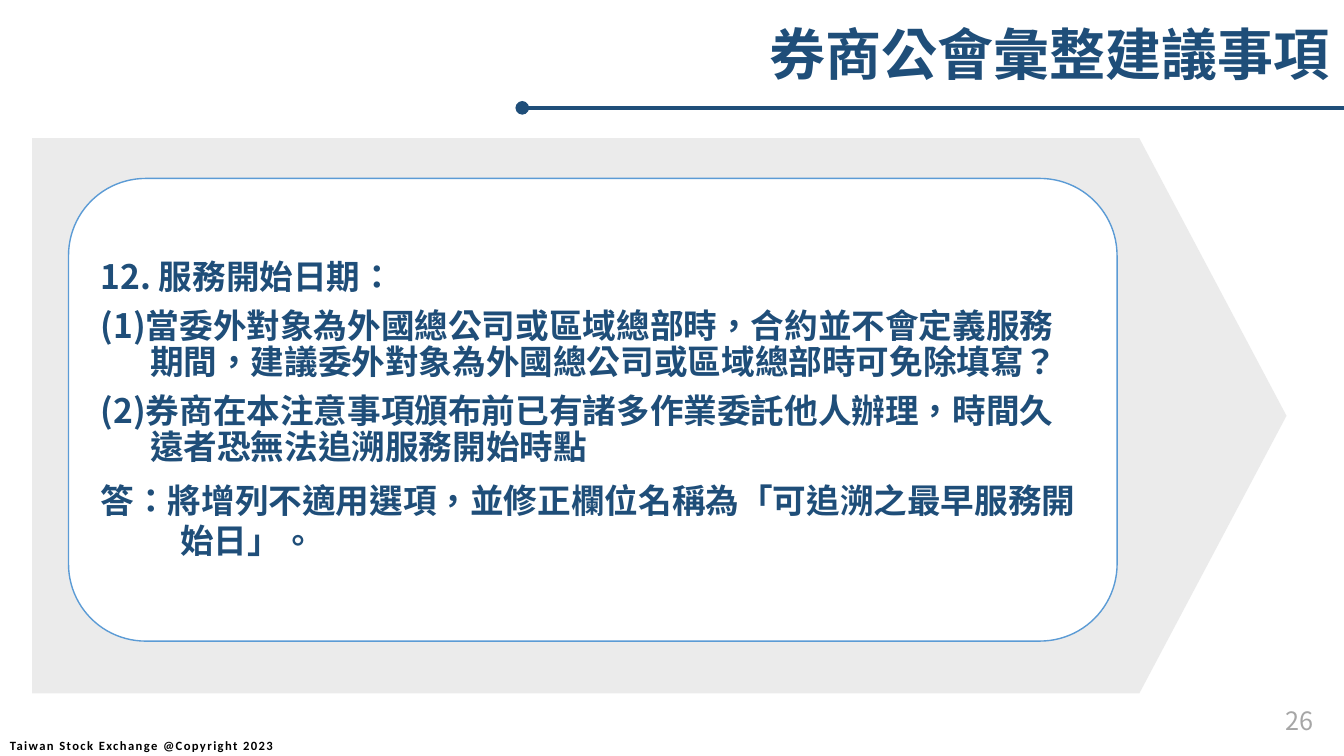
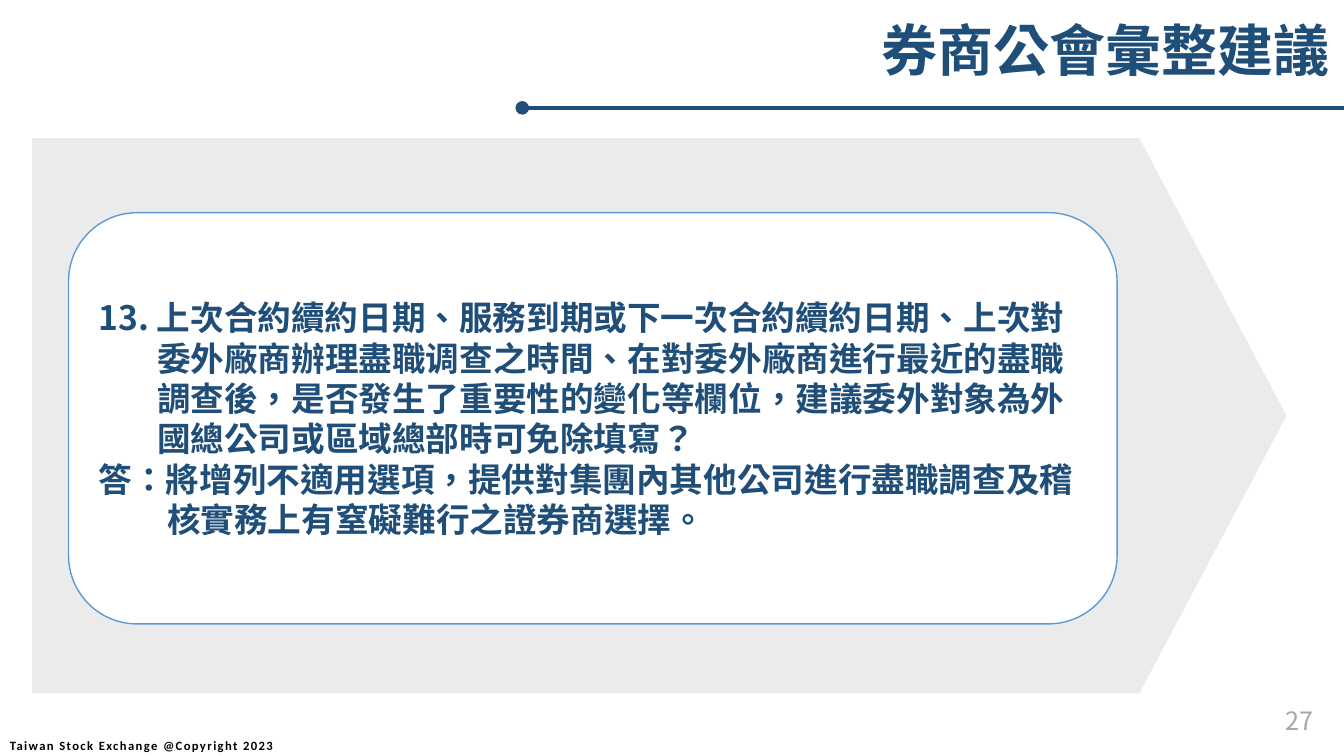
import pptx
import pptx.dml.color
import pptx.enum.lang
import pptx.enum.shapes
import pptx.enum.text
import pptx.oxml.ns
import pptx.util
from lxml import etree

Inches = pptx.util.Inches
Pt = pptx.util.Pt
ALIGN = pptx.enum.text.PP_ALIGN
ANCHOR = pptx.enum.text.MSO_ANCHOR
SHAPE = pptx.enum.shapes.MSO_SHAPE
qn = pptx.oxml.ns.qn

COLORS = {
    "navy": "1F4E79",
    "outline": "5B9BD5",
    "arrow": "D9D9D9",
    "panel": "FFFFFF",
    "number": "A6A6A6",
    "copyright": "000000",
}
CJK_FONT = "Noto Sans CJK SC"
SLIDE_WIDTH = 13.33
TIGHT = {"line_spacing": 0.9, "space_after": 9}

SLIDES = [
    {
        "number": 26,
        "title": "券商公會彙整建議事項",
        "title_top": 0.14,
        "panel": (0.68, 1.77, 10.4, 4.59),
        "body": (0.9, 2, 9.95, 4.14),
        "paragraphs": [
            ("12. 服務開始日期：", {"hanging": 0.49, **TIGHT}),
            ("(1)當委外對象為外國總公司或區域總部時，合約並不會定義服務期間，"
             "建議委外對象為外國總公司或區域總部時可免除填寫？", {"hanging": 0.49, **TIGHT}),
            ("(2)券商在本注意事項頒布前已有諸多作業委託他人辦理，"
             "時間久遠者恐無法追溯服務開始時點", {"hanging": 0.49, **TIGHT}),
            ("答：將增列不適用選項，並修正欄位名稱為「可追溯之最早服務開始日」。",
             {"hanging": 0.79}),
        ],
    },
    {
        "number": 27,
        "title": "券商公會彙整建議",
        "title_top": 0.11,
        "panel": (0.68, 2.11, 10.4, 4.08),
        "body": (0.88, 2.31, 10, 3.68),
        "paragraphs": [
            ("13. 上次合約續約日期、服務到期或下一次合約續約日期、"
             "上次對委外廠商辦理盡職调查之時間、在對委外廠商進行最近的盡職調查後，"
             "是否發生了重要性的變化等欄位，建議委外對象為外國總公司或區域總部時可免除填寫？",
             {"hanging": 0.58}),
            ("答：將增列不適用選項，提供對集團內其他公司進行盡職調查及稽核實務上"
             "有窒礙難行之證券商選擇。", {"hanging": 0.68}),
        ],
    },
]


def rgb(name):
    return pptx.dml.color.RGBColor.from_string(COLORS[name])


def write_text(paragraph, text, size=24, color="navy", bold=True, font_name=CJK_FONT,
               align=ALIGN.LEFT, hanging=0, line_spacing=None, space_after=0, tracking=0):
    paragraph.alignment = align
    paragraph.line_spacing = line_spacing
    paragraph.space_after = Pt(space_after)
    if hanging:
        properties = paragraph._p.get_or_add_pPr()
        properties.set("marL", str(Inches(hanging)))
        properties.set("indent", str(-Inches(hanging)))
    run = paragraph.add_run()
    run.text = text
    font = run.font
    font.name = font_name
    font.size = Pt(size)
    font.bold = bold
    font.color.rgb = rgb(color)
    font.language_id = pptx.enum.lang.MSO_LANGUAGE_ID.TRADITIONAL_CHINESE
    run_properties = run._r.get_or_add_rPr()
    etree.SubElement(run_properties, qn("a:ea")).set("typeface", font_name)
    if tracking:
        run_properties.set("spc", str(tracking * 100))


def add_text_box(slide, box, paragraphs, anchor=ANCHOR.MIDDLE, inset=0.05):
    frame = slide.shapes.add_textbox(*map(Inches, box)).text_frame
    frame.word_wrap = True
    frame.vertical_anchor = anchor
    frame.margin_top = frame.margin_bottom = Inches(inset)
    for index, (text, style) in enumerate(paragraphs):
        paragraph = frame.add_paragraph() if index else frame.paragraphs[0]
        write_text(paragraph, text, **style)


def add_panel(slide, kind, box, fill, outline=None, adjustment=None, opacity=None):
    shape = slide.shapes.add_shape(kind, *map(Inches, box))
    shape.shadow.inherit = False
    shape.fill.solid()
    shape.fill.fore_color.rgb = rgb(fill)
    if adjustment is not None:
        shape.adjustments[0] = adjustment
    if opacity is not None:
        color = shape._element.spPr.find(qn("a:solidFill"))[0]
        etree.SubElement(color, qn("a:alpha")).set("val", str(opacity * 1000))
    if outline:
        shape.line.color.rgb = rgb(outline)
        shape.line.width = Pt(1)
    else:
        shape.line.fill.background()


def add_title_rule(slide):
    rule = slide.shapes.add_connector(
        pptx.enum.shapes.MSO_CONNECTOR.STRAIGHT,
        Inches(5.18), Inches(1.07), Inches(SLIDE_WIDTH), Inches(1.07))
    rule.line.color.rgb = rgb("navy")
    rule.line.width = Pt(3.25)
    etree.SubElement(rule.line._get_or_add_ln(), qn("a:headEnd")).set("type", "oval")
    etree.SubElement(rule._element.spPr, qn("a:effectLst"))


def add_frame(slide, title, title_top, number):
    add_text_box(slide, (0, 7.2, 3.09, 0.4), [
        ("Taiwan Stock Exchange @Copyright 2023",
         {"size": 9, "color": "copyright", "font_name": "Calibri", "tracking": 1})])
    add_text_box(slide, (7.28, title_top, 6, 0.77),
                 [(title, {"size": 40, "align": ALIGN.RIGHT})], anchor=ANCHOR.TOP)
    add_title_rule(slide)
    add_panel(slide, SHAPE.PENTAGON, (0.32, 1.37, 12.44, 5.51), "arrow",
              adjustment=0.265, opacity=50)
    add_text_box(slide, (10.13, 6.95, 3, 0.4), [
        (str(number), {"size": 18, "color": "number", "bold": False, "align": ALIGN.RIGHT})])


def main():
    presentation = pptx.Presentation()
    presentation.slide_width = Inches(SLIDE_WIDTH)
    presentation.slide_height = Inches(7.5)
    for content in SLIDES:
        slide = presentation.slides.add_slide(presentation.slide_layouts[6])
        add_frame(slide, content["title"], content["title_top"], content["number"])
        add_panel(slide, SHAPE.ROUNDED_RECTANGLE, content["panel"], "panel", outline="outline")
        add_text_box(slide, content["body"], content["paragraphs"], inset=0.1)
    presentation.save("out.pptx")


if __name__ == "__main__":
    main()
